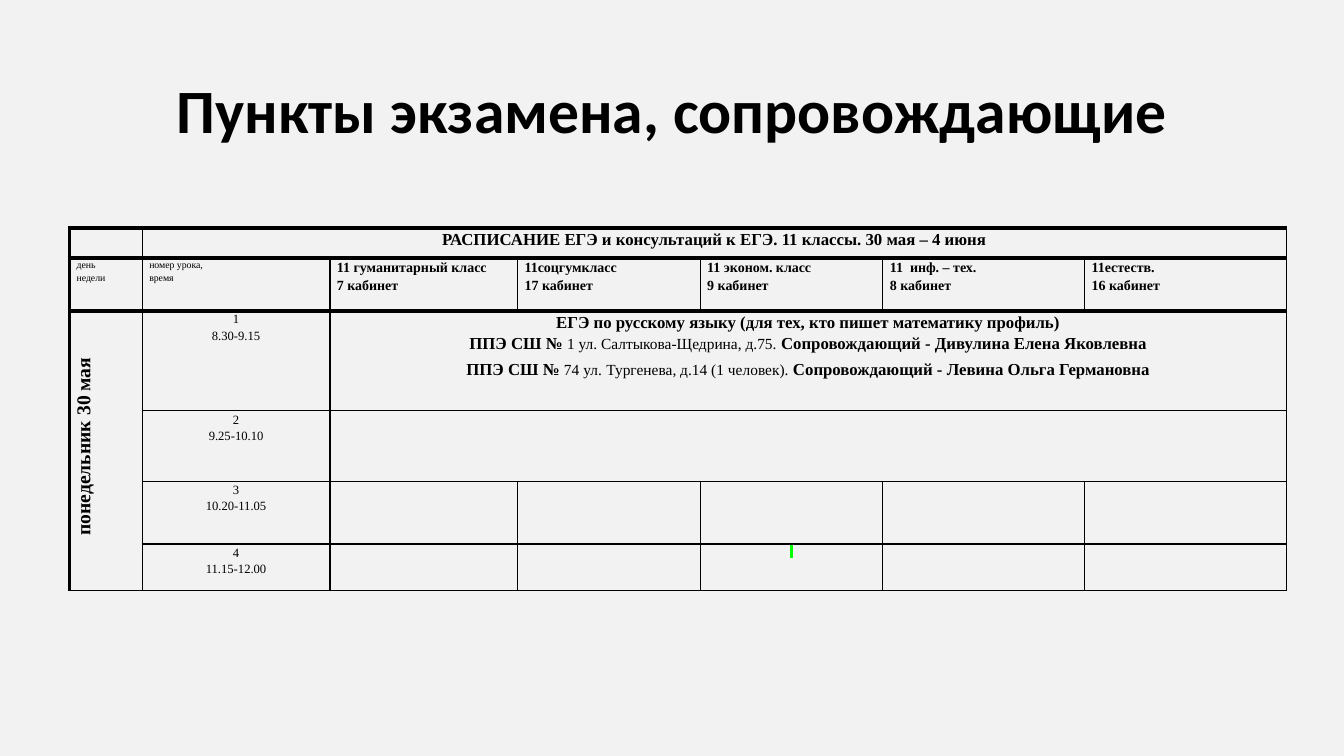
from lxml import etree
from pptx import Presentation
from pptx.dml.color import RGBColor
from pptx.enum.text import MSO_ANCHOR, PP_ALIGN
from pptx.oxml.ns import qn
from pptx.util import Inches, Pt

LEFT, CENTER = PP_ALIGN.LEFT, PP_ALIGN.CENTER
MIDDLE = MSO_ANCHOR.MIDDLE
BACKGROUND = RGBColor(0xF2, 0xF2, 0xF2)
BLACK = RGBColor(0, 0, 0)
MARK_GREEN = RGBColor(0, 0xFF, 0)
SERIF, SANS = "Times New Roman", "Calibri"

COLUMN_WIDTHS = [0.72, 1.86, 1.86, 1.81, 1.81, 2, 2]
ROW_HEIGHTS = [0.3, 0.52, 0.99, 0.7, 0.62, 0.46]
HEADING = "РАСПИСАНИЕ ЕГЭ и консультаций к ЕГЭ. 11 классы. 30 мая – 4 июня"
LABELS = [["день", "недели"], ["номер урока,", "время"]]
CLASSES = [
    ["11 гуманитарный класс", "7 кабинет"],
    ["11соцгумкласс", "17 кабинет"],
    ["11 эконом. класс", "9 кабинет"],
    ["11  инф. – тех.", "8 кабинет"],
    ["11естеств.", "16 кабинет"],
]
LESSON_TIMES = ["8.30-9.15", "9.25-10.10", "10.20-11.05", "11.15-12.00"]
EXAM = [
    [("ЕГЭ по русскому языку (для тех, кто пишет математику профиль)", 12, True)],
    [("ППЭ СШ № ", 12, True),
     ("1 ул. Салтыкова-Щедрина, д.75.", 11, False),
     (" Сопровождающий - Дивулина Елена Яковлевна", 12, True)],
    [("ППЭ СШ № ", 12, True),
     ("74 ул.", 11, False),
     (" ", 14, False, SANS),
     ("Тургенева, д.14 (1 человек).", 11, False),
     (" Сопровождающий - Левина Ольга Германовна", 12, True)],
]


def add_run(paragraph, text, size, bold=False, font=SERIF):
    run = paragraph.add_run()
    run.text = text
    run.font.size = Pt(size)
    run.font.bold = bold
    run.font.color.rgb = BLACK
    run.font.name = font
    return run


def write_paragraphs(frame, paragraphs, align, spacing=1.15):
    for index, runs in enumerate(paragraphs):
        paragraph = frame.add_paragraph() if index else frame.paragraphs[0]
        paragraph.alignment = align
        paragraph.line_spacing = spacing
        for run in runs:
            add_run(paragraph, *run)


def write_lines(cell, lines, size, bold=False, align=LEFT):
    write_paragraphs(cell.text_frame, [[(line, size, bold)] for line in lines], align)


def set_border(cell, side, width):
    line = etree.SubElement(cell._tc.get_or_add_tcPr(), qn("a:ln" + side), w=str(Pt(width)))
    fill = etree.SubElement(line, qn("a:solidFill"))
    etree.SubElement(fill, qn("a:srgbClr"), val=str(BLACK))


def format_cell(cell, row, column):
    cell.margin_left = cell.margin_right = Inches(0.07)
    cell.margin_top = cell.margin_bottom = 0
    widths = {
        "L": 1 if column else 3,
        "R": 1,
        "T": 3 if row <= 2 else 1,
        "B": 3 if row <= 1 else 1,
    }
    for side, width in widths.items():
        set_border(cell, side, width)
    cell.fill.background()
    paragraph = cell.text_frame.paragraphs[0]
    etree.SubElement(paragraph._p, qn("a:endParaRPr"), sz="900")


def add_green_mark(cell):
    paragraph = cell.text_frame.paragraphs[0]
    paragraph.alignment = CENTER
    mark = add_run(paragraph, " ", 9)
    highlight = etree.Element(qn("a:highlight"))
    etree.SubElement(highlight, qn("a:srgbClr"), val=str(MARK_GREEN))
    mark._r.rPr.find(qn("a:solidFill")).addnext(highlight)


def add_title(slide, left, top, width, height):
    title = slide.shapes.add_textbox(left, top, width, height).text_frame
    title.word_wrap = True
    title.vertical_anchor = MIDDLE
    write_paragraphs(title, [[("Пункты экзамена, сопровождающие", 44, True, SANS)]], CENTER, 0.9)


def add_schedule(slide, left, top, width, height):
    schedule = slide.shapes.add_table(
        len(ROW_HEIGHTS), len(COLUMN_WIDTHS), left, top, width, height).table
    schedule.first_row = schedule.horz_banding = False
    for column, column_width in zip(schedule.columns, COLUMN_WIDTHS):
        column.width = int(width * column_width / sum(COLUMN_WIDTHS))
    for row, row_height in zip(schedule.rows, ROW_HEIGHTS):
        row.height = int(height * row_height / sum(ROW_HEIGHTS))
    for row in range(len(ROW_HEIGHTS)):
        for column in range(len(COLUMN_WIDTHS)):
            format_cell(schedule.cell(row, column), row, column)

    for row, column, last_row, last_column in [(0, 1, 0, 6), (2, 0, 5, 0), (2, 2, 2, 6), (3, 2, 3, 6)]:
        schedule.cell(row, column).merge(schedule.cell(last_row, last_column))

    write_lines(schedule.cell(0, 1), [HEADING], 12, True, CENTER)
    for column, lines in enumerate(LABELS):
        write_lines(schedule.cell(1, column), lines, 7)
    for column, lines in enumerate(CLASSES, start=len(LABELS)):
        write_lines(schedule.cell(1, column), lines, 10, True)

    day = schedule.cell(2, 0)
    day.vertical_anchor = MIDDLE
    day._tc.get_or_add_tcPr().set("vert", "vert270")
    write_lines(day, ["понедельник 30 мая"], 14, True, CENTER)
    day.text_frame.paragraphs[0]._p.get_or_add_pPr().set("marL", str(Inches(0.08)))

    for number, time in enumerate(LESSON_TIMES, start=1):
        write_lines(schedule.cell(number + 1, 1), [str(number), time], 9, align=CENTER)
    write_paragraphs(schedule.cell(2, 2).text_frame, EXAM, CENTER)
    add_green_mark(schedule.cell(5, 4))


def main():
    presentation = Presentation()
    presentation.slide_width = Inches(13.33)
    presentation.slide_height = Inches(7.5)
    slide = presentation.slides.add_slide(presentation.slide_layouts[6])
    slide.background.fill.solid()
    slide.background.fill.fore_color.rgb = BACKGROUND
    add_title(slide, Inches(0.92), Inches(0.4), Inches(11.5), Inches(1.45))
    add_schedule(slide, Inches(0.69), Inches(2.26), Inches(12.07), Inches(3.6))
    presentation.save("out.pptx")


if __name__ == "__main__":
    main()
